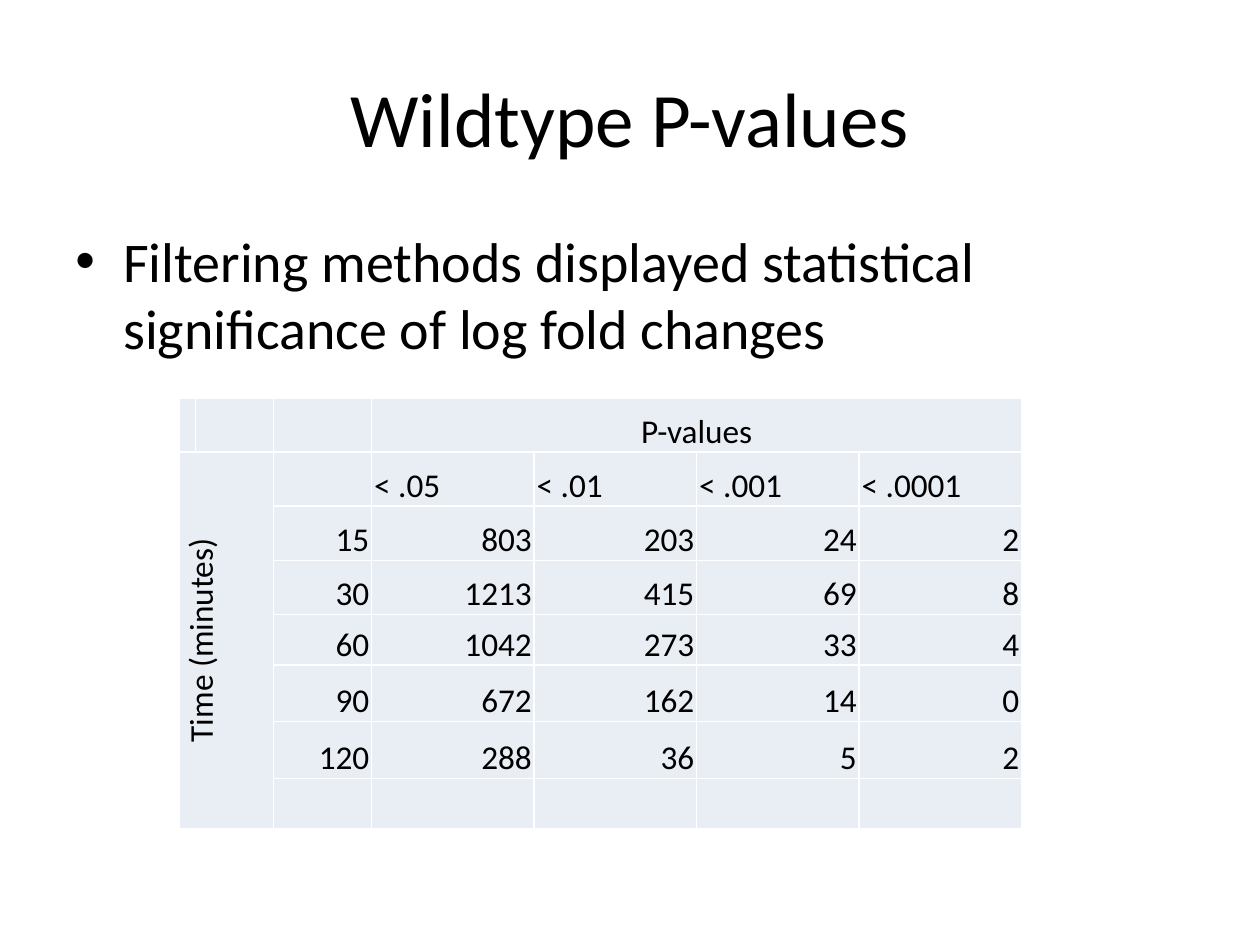
import dataclasses

import lxml.etree
import pptx
import pptx.dml.color
import pptx.enum.text
import pptx.oxml.ns
import pptx.util

WIDE, HIGH = 10, 7.5
FONT = "Calibri"
BLACK, WHITE, PALE = "000000", "FFFFFF", "E9EDF4"
ALIGN = pptx.enum.text.PP_ALIGN
ANCHOR = pptx.enum.text.MSO_ANCHOR
inch = pptx.util.Inches


@dataclasses.dataclass
class Box:
    """A place on the slide, in shares of its size."""
    left: float
    top: float
    width: float
    height: float

    def place(self) -> list[int]:
        return [inch(self.left * WIDE), inch(self.top * HIGH),
                inch(self.width * WIDE), inch(self.height * HIGH)]


@dataclasses.dataclass
class Entry:
    """Text in one table cell, by grid row and column."""
    row: int
    col: int
    text: str
    align: ALIGN


def color(code: str) -> pptx.dml.color.RGBColor:
    return pptx.dml.color.RGBColor.from_string(code)


def add_run(para, text: str, size: float) -> None:
    run = para.add_run()
    run.text = text
    run.font.size = pptx.util.Pt(size)
    run.font.name = FONT
    run.font.color.rgb = color(BLACK)


def add_text(slide, box: Box, text: str, size: float, anchor: ANCHOR):
    frame = slide.shapes.add_textbox(*box.place()).text_frame
    frame.word_wrap = True
    frame.vertical_anchor = anchor
    para = frame.paragraphs[0]
    add_run(para, text, size)
    return para


def add_bullet(para, indent: float) -> None:
    props = para._p.get_or_add_pPr()
    props.set("marL", str(inch(indent)))
    props.set("indent", str(-inch(indent)))
    for tag, key, value in (("a:buFont", "typeface", "Arial"),
                            ("a:buChar", "char", "•")):
        mark = lxml.etree.SubElement(props, pptx.oxml.ns.qn(tag))
        mark.set(key, value)


def style_cell(cell) -> None:
    cell.margin_left = cell.margin_right = cell.margin_top = inch(0.02)
    cell.margin_bottom = 0
    cell.vertical_anchor = ANCHOR.BOTTOM
    props = cell._tc.get_or_add_tcPr()
    # Borders must come before the fill
    for side in ("lnL", "lnR", "lnT", "lnB"):
        line = lxml.etree.SubElement(props, pptx.oxml.ns.qn(f"a:{side}"))
        line.set("w", str(pptx.util.Pt(1)))
        fill = lxml.etree.SubElement(line, pptx.oxml.ns.qn("a:solidFill"))
        tint = lxml.etree.SubElement(fill, pptx.oxml.ns.qn("a:srgbClr"))
        tint.set("val", WHITE)
    cell.fill.solid()
    cell.fill.fore_color.rgb = color(PALE)


def add_grid(slide, box: Box, cols: list[float], rows: list[float]):
    table = slide.shapes.add_table(len(rows), len(cols), *box.place()).table
    table.first_row = table.horz_banding = False
    for col, width in zip(table.columns, cols):
        col.width = inch(width)
    for row, height in zip(table.rows, rows):
        row.height = inch(height)
    for cell in table.iter_cells():
        style_cell(cell)
    return table


def fill_cell(table, entry: Entry) -> None:
    para = table.cell(entry.row, entry.col).text_frame.paragraphs[0]
    para.alignment = entry.align
    add_run(para, entry.text, 19)


def main() -> None:
    deck = pptx.Presentation()
    deck.slide_width, deck.slide_height = inch(WIDE), inch(HIGH)
    slide = deck.slides.add_slide(deck.slide_layouts[6])

    # Title and bullet
    title = add_text(slide, Box(0.05, 0.04, 0.9, 1 / 6),
                     "Wildtype P-values", 44, ANCHOR.MIDDLE)
    title.alignment = ALIGN.CENTER
    point = add_text(
        slide, Box(0.05, 0.233, 0.9, 0.66),
        "Filtering methods displayed statistical significance of log fold changes",
        32, ANCHOR.TOP)
    add_bullet(point, 0.38)

    # Table grid with merged headings
    table = add_grid(slide, Box(0.142, 0.421, 0.667, 0.456),
                     [0.13, 0.62, 0.78] + [1.29] * 4,
                     [0.43] * 4 + [0.4, 0.45, 0.45, 0.4])
    table.cell(0, 3).merge(table.cell(0, 6))
    table.cell(1, 0).merge(table.cell(7, 1))
    table.cell(1, 0)._tc.get_or_add_tcPr().set("vert", "vert270")

    # Headings, then counts by time and cutoff
    entries = [Entry(0, 3, "P-values", ALIGN.CENTER),
               Entry(1, 0, "Time (minutes)", ALIGN.CENTER)]
    limits = ["< .05", "< .01", "< .001", "< .0001"]
    entries += [Entry(1, col, text, ALIGN.LEFT)
                for col, text in enumerate(limits, 3)]
    counts = [(15, 803, 203, 24, 2),
              (30, 1213, 415, 69, 8),
              (60, 1042, 273, 33, 4),
              (90, 672, 162, 14, 0),
              (120, 288, 36, 5, 2)]
    entries += [Entry(row, col, str(count), ALIGN.RIGHT)
                for row, line in enumerate(counts, 2)
                for col, count in enumerate(line, 2)]
    for entry in entries:
        fill_cell(table, entry)

    deck.save("out.pptx")


if __name__ == "__main__":
    main()
